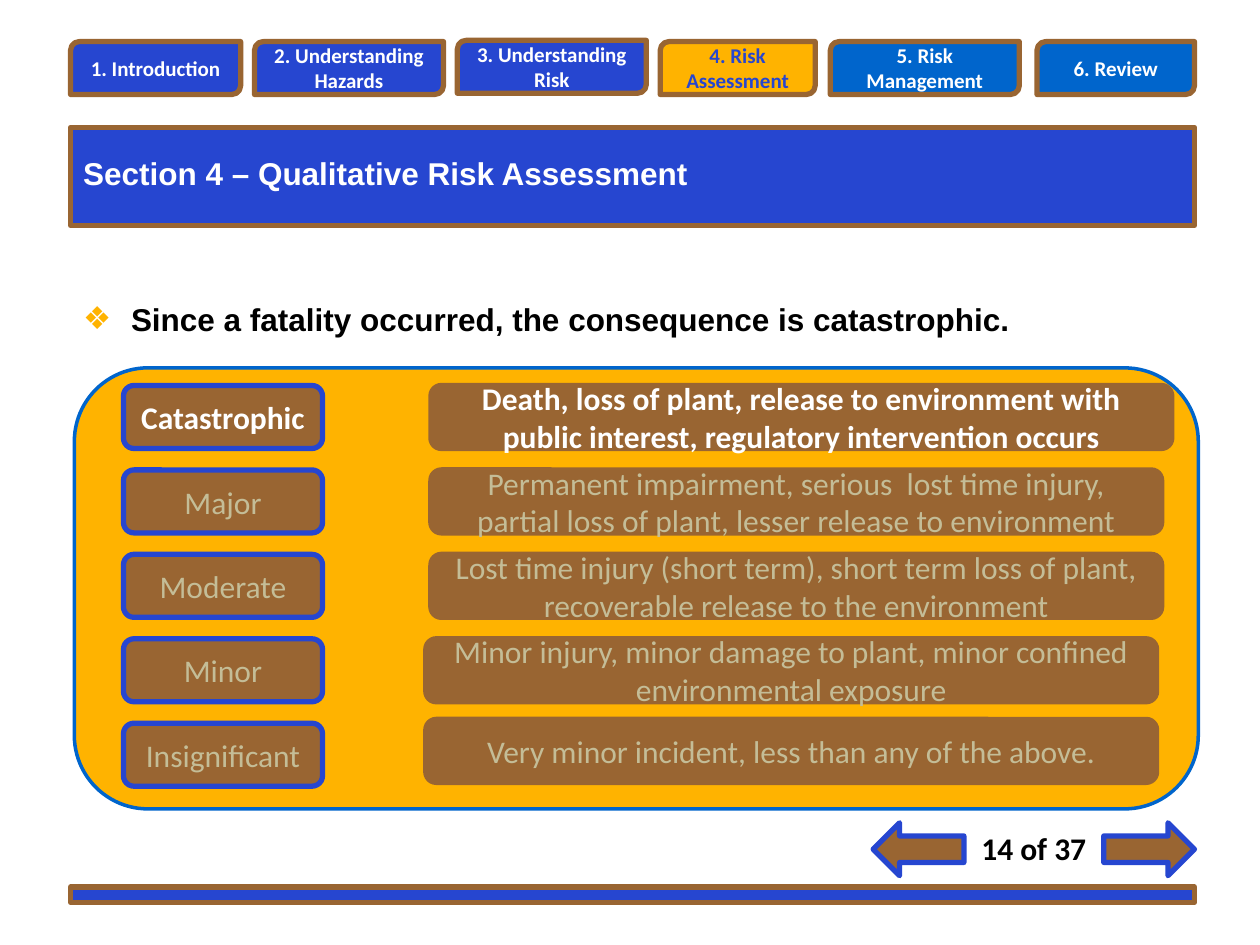
"""Build a risk assessment slide with section tabs and a consequence scale."""
from lxml import etree
from pptx import Presentation
from pptx.dml.color import RGBColor
from pptx.enum.shapes import MSO_SHAPE
from pptx.enum.text import MSO_ANCHOR, MSO_AUTO_SIZE, PP_ALIGN
from pptx.oxml.ns import qn
from pptx.util import Inches, Pt

RECT, ROUND = MSO_SHAPE.RECTANGLE, MSO_SHAPE.ROUNDED_RECTANGLE
TAB = MSO_SHAPE.ROUND_2_DIAG_RECTANGLE
BACK, NEXT = MSO_SHAPE.LEFT_ARROW, MSO_SHAPE.RIGHT_ARROW
TOP, MIDDLE = MSO_ANCHOR.TOP, MSO_ANCHOR.MIDDLE
LEFT, CENTER = PP_ALIGN.LEFT, PP_ALIGN.CENTER
NO_FIT = MSO_AUTO_SIZE.NONE

COLORS = {"blue": "2646D0", "sky": "0065CC", "amber": "FFB300", "brown": "996532",
          "white": "FFFFFF", "black": "000000", "faded": "C4BD97"}

TITLE = "Section 4 – Qualitative Risk Assessment"
FINDING = "Since a fatality occurred, the consequence is catastrophic."
PAGE = "14 of 37"

TABS = [
    ("1. Introduction", 0.56, 0.33, 1.35, "blue", "white"),
    ("2. Understanding Hazards", 2.02, 0.33, 1.5, "blue", "white"),
    ("3. Understanding Risk", 3.63, 0.32, 1.5, "blue", "white"),
    ("4. Risk Assessment", 5.24, 0.33, 1.23, "amber", "blue"),
    ("5. Risk Management", 6.59, 0.33, 1.5, "sky", "white"),
    ("6. Review", 8.23, 0.33, 1.25, "sky", "white"),
]

LEVELS = [
    ("Catastrophic", "Death, loss of plant, release to environment with public interest, "
     "regulatory intervention occurs", 3.42, 5.88, 0),
    ("Major", "Permanent impairment, serious  lost time injury, partial loss of plant, "
     "lesser release to environment", 3.42, 5.8, 0),
    ("Moderate", "Lost time injury (short term), short term loss of plant, "
     "recoverable release to the environment", 3.42, 5.8, 0),
    ("Minor", "Minor injury, minor damage to plant, minor confined environmental exposure",
     3.38, 5.8, 0),
    ("Insignificant", "Very minor incident, less than any of the above.", 3.38, 5.8, 0.03),
]
CURRENT = "Catastrophic"

MARGIN, WIDTH = 0.56, 8.92
TAB_H, ROW_TOP, ROW_H, ROW_STEP = 0.42, 3.06, 0.5, 0.67
LABEL_X, LABEL_W = 0.98, 1.58
NAV_Y, ARROW_W, ARROW_H = 6.53, 0.72, 0.42


def rgb(name):
    return RGBColor.from_string(COLORS[name])


def place(s, x, y, w, h):
    s.left, s.top, s.width, s.height = (Inches(v) for v in (x, y, w, h))


def paint(s, fill, line, weight=3):
    s.fill.solid()
    s.fill.fore_color.rgb = rgb(fill)
    s.line.color.rgb = rgb(line)
    s.line.width = Pt(weight)


def write(s, text, color, size=18, bold=True, font="Calibri", align=CENTER, anchor=MIDDLE):
    tf = s.text_frame
    tf.word_wrap, tf.auto_size, tf.vertical_anchor = True, NO_FIT, anchor
    p = tf.paragraphs[0]
    p.text, p.alignment, p.space_before = text, align, Pt(0)
    p.font.name, p.font.size, p.font.bold = font, Pt(size), bold
    p.font.color.rgb = rgb(color)
    return p


def add_box(slide, kind, x, y, w, h, fill, line, weight=3):
    s = slide.shapes.add_shape(kind, *(Inches(v) for v in (x, y, w, h)))
    s.shadow.inherit = False
    paint(s, fill, line, weight)
    return s


def set_bullet(p, char, color, indent):
    pPr = p.font._element.getparent()
    pPr.set("marL", str(Inches(indent)))
    pPr.set("indent", str(-Inches(indent)))
    clr = etree.Element(qn("a:buClr"))
    etree.SubElement(clr, qn("a:srgbClr"), val=COLORS[color])
    font = etree.Element(qn("a:buFont"), typeface="Arial")
    mark = etree.Element(qn("a:buChar"), char=char)
    for el in (clr, font, mark):
        pPr.find(qn("a:defRPr")).addprevious(el)


def main():
    prs = Presentation()
    prs.slide_width, prs.slide_height = Inches(10), Inches(7.5)
    slide = prs.slides.add_slide(prs.slide_layouts[1])

    title, body = slide.shapes.title, slide.placeholders[1]
    place(title, MARGIN, 1.01, WIDTH, 0.78)
    paint(title, "blue", "brown")
    write(title, TITLE, "white", font="Arial", align=LEFT, anchor=TOP)
    title.text_frame.margin_top = Inches(0.21)

    place(body, MARGIN, 2.33, 8.95, 0.4)
    p = write(body, FINDING, "black", font="Arial", align=LEFT, anchor=TOP)
    set_bullet(p, "❖", "amber", 0.38)

    for text, x, y, w, fill, color in TABS:
        write(add_box(slide, TAB, x, y, w, TAB_H, fill, "brown"), text, color, size=12)

    add_box(slide, ROUND, 0.59, 2.92, WIDTH, 3.5, "amber", "sky", 2)
    for i, (level, meaning, x, w, rise) in enumerate(LEVELS):
        y = ROW_TOP + i * ROW_STEP
        bold = level == CURRENT
        color = "white" if bold else "faded"
        label = add_box(slide, ROUND, LABEL_X, y, LABEL_W, ROW_H, "brown", "blue")
        write(label, level, color, bold=bold)
        detail = add_box(slide, ROUND, x, y - rise, w, ROW_H, "brown", "brown")
        write(detail, meaning, color, bold=bold)

    for kind, x in ((BACK, 6.93), (NEXT, 8.76)):
        add_box(slide, kind, x, NAV_Y, ARROW_W, ARROW_H, "brown", "blue")
    page = slide.shapes.add_textbox(Inches(7.65), Inches(NAV_Y), Inches(1.11), Inches(0.4))
    write(page, PAGE, "black", anchor=TOP)

    add_box(slide, RECT, MARGIN, 7.04, WIDTH, 0.12, "blue", "brown")
    prs.save("out.pptx")


if __name__ == "__main__":
    main()
